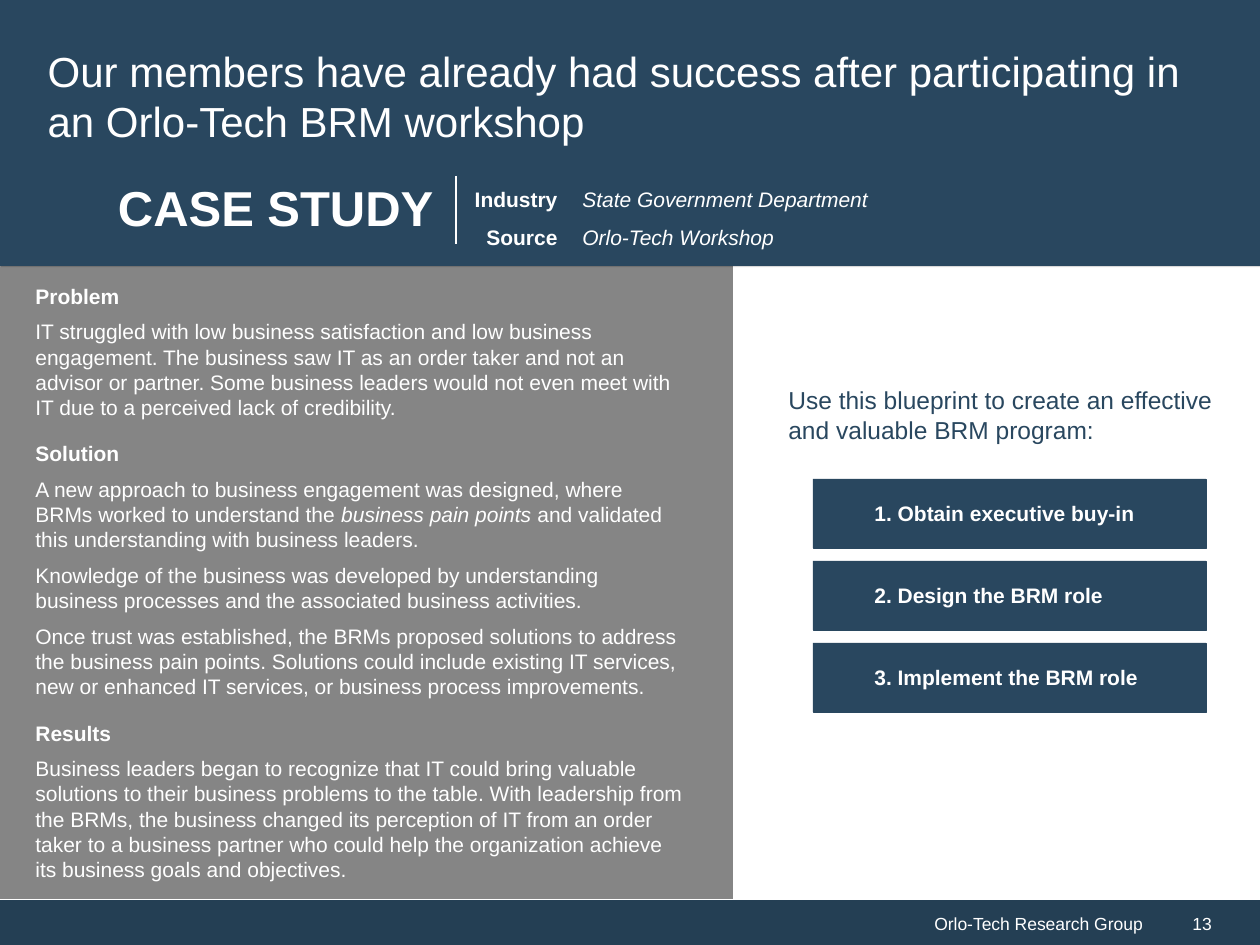
from lxml.etree import SubElement
from pptx import Presentation
from pptx.dml.color import RGBColor as Rgb
from pptx.enum.shapes import MSO_CONNECTOR as Line, MSO_SHAPE as Shape
from pptx.enum.text import MSO_ANCHOR as Anchor, MSO_AUTO_SIZE as Fit, PP_ALIGN as Align
from pptx.oxml.ns import qn
from pptx.util import Pt

EMU_PER_PX = 914400 / 126
COLOURS = {"navy": "29475F", "footer": "243F54", "grey": "858585", "white": "FFFFFF"}


def add_box(place, fill=None, anchor=Anchor.TOP):
    lengths = [round(px * EMU_PER_PX) for px in place]
    if fill:
        box = page.shapes.add_shape(Shape.RECTANGLE, *lengths)
        box.shadow.inherit = False
        box.fill.solid()
        box.fill.fore_color.rgb = Rgb.from_string(COLOURS[fill])
        box.line.fill.background()
    else:
        box = page.shapes.add_textbox(*lengths)
    box.text_frame.word_wrap = True
    box.text_frame.vertical_anchor = anchor
    return box


def write(box, spans, size=12, colour="white", left=0, first=0, font=None, **layout):
    frame = box.text_frame
    para = frame.paragraphs[0]
    if para.runs:
        para = frame.add_paragraph()
    for key, value in {"alignment": Align.LEFT, **layout}.items():
        setattr(para, key, value)
    properties = para._p.get_or_add_pPr()
    properties.set("marL", str(round(left * EMU_PER_PX)))
    properties.set("indent", str(round(first * EMU_PER_PX)))
    for text, style in spans:
        span = para.add_run()
        span.text = text
        span.font.color.rgb = Rgb.from_string(COLOURS[colour])
        for key, value in {"name": "Arial", "size": Pt(size), **(font or {}), **style}.items():
            setattr(span.font, key, value)


deck = Presentation()
deck.slide_width, deck.slide_height = [round(px * EMU_PER_PX) for px in (1260, 945)]
page = deck.slides.add_slide(deck.slide_layouts[5])
bold, italic = {"bold": True}, {"italic": True}

footer = add_box((0, 900, 1155, 46), "footer", Anchor.MIDDLE)
write(footer, [("Orlo-Tech Research Group", {})], size=10, left=37, alignment=Align.RIGHT)
page_number = add_box((1155, 900, 105, 46), "footer", Anchor.MIDDLE)
write(page_number, [("13", {})], size=10, left=25)

add_box((0, 0, 1260, 155), "navy")
add_box((0, 260, 733, 639), "grey")

story = add_box((23, 277, 675, 619))
sections = {
    "Problem": [
        [("IT struggled with low business satisfaction and low business engagement. The business saw IT as an order taker and not an advisor or partner. Some business leaders would not even meet with IT due to a perceived lack of credibility.", {})],
    ],
    "Solution": [
        [
            ("A new approach to business engagement was designed, where BRMs worked to understand the ", {}),
            ("business pain points ", italic),
            ("and validated this understanding with business leaders.", {}),
        ],
        [("Knowledge of the business was developed by understanding business processes and the associated business activities.", {})],
        [("Once trust was established, the BRMs proposed solutions to address the business pain points. Solutions could include existing IT services, new or enhanced IT services, or business process improvements.", {})],
    ],
    "Results": [
        [("Business leaders began to recognize that IT could bring valuable solutions to their business problems to the table. With leadership from the BRMs, the business changed its perception of IT from an order taker to a business partner who could help the organization achieve its business goals and objectives.", {})],
    ],
}
for index, (heading, paragraphs) in enumerate(sections.items()):
    write(story, [(heading, bold)], space_before=Pt(6 if index else 0), space_after=Pt(6))
    for spans in paragraphs:
        write(story, spans, space_after=Pt(6))

banner = add_box((0, 147, 1260, 119), "navy", Anchor.MIDDLE)
banner.text_frame.margin_left = round(94 * EMU_PER_PX)
write(banner, [("CASE STUDY", bold)], size=28, left=24)
effects = banner._element.spPr.find(qn("a:effectLst"))
shadow = SubElement(effects, qn("a:outerShdw"), blurRad="0", dist="12700", dir="2700000", rotWithShape="0")
shadow_colour = SubElement(shadow, qn("a:srgbClr"), val="000000")
SubElement(shadow_colour, qn("a:alpha"), val="14000")

labels = add_box((450, 168, 120, 84), "navy")
for label in ("Industry", "Source"):
    write(labels, [(label, bold)], alignment=Align.RIGHT, line_spacing=1.5)

divider = page.shapes.add_connector(
    Line.STRAIGHT, *[round(px * EMU_PER_PX) for px in (456, 176, 456, 244)]
)
divider.line.color.rgb = Rgb.from_string(COLOURS["white"])
divider.line.width = Pt(0.75)
SubElement(divider._element.spPr, qn("a:effectLst"))

details = add_box((570, 168, 515, 89))
for detail in ("State Government Department", "Orlo-Tech Workshop"):
    write(details, [(detail, italic)], line_spacing=1.5)

intro = add_box((776, 379, 454, 72))
write(
    intro,
    [("Use this blueprint to create an effective and valuable BRM program:", {})],
    size=14,
    colour="navy",
)

steps = ("Obtain executive buy-in", "Design the BRM role", "Implement the BRM role")
for index, step in enumerate(steps):
    button = add_box((813, 479 + 82 * index, 393, 69), "navy", Anchor.MIDDLE)
    button.line.color.rgb = Rgb.from_string(COLOURS["navy"])
    button.line.width = Pt(0.25)
    write(button, [(f"{index + 1}. {step}", bold)], first=49)

title = page.shapes.title
title.left, title.top, title.width, title.height = [
    round(px * EMU_PER_PX) for px in (35, 35, 1188, 121)
]
frame_format = {"word_wrap": True, "auto_size": Fit.NONE, "vertical_anchor": Anchor.MIDDLE}
for key, value in frame_format.items():
    setattr(title.text_frame, key, value)
write(
    title,
    [("Our members have already had success after participating in an Orlo-Tech BRM workshop", {})],
    size=24,
    space_before=Pt(0),
    space_after=Pt(8),
)
page.shapes._spTree.append(title._element)

deck.save("out.pptx")
